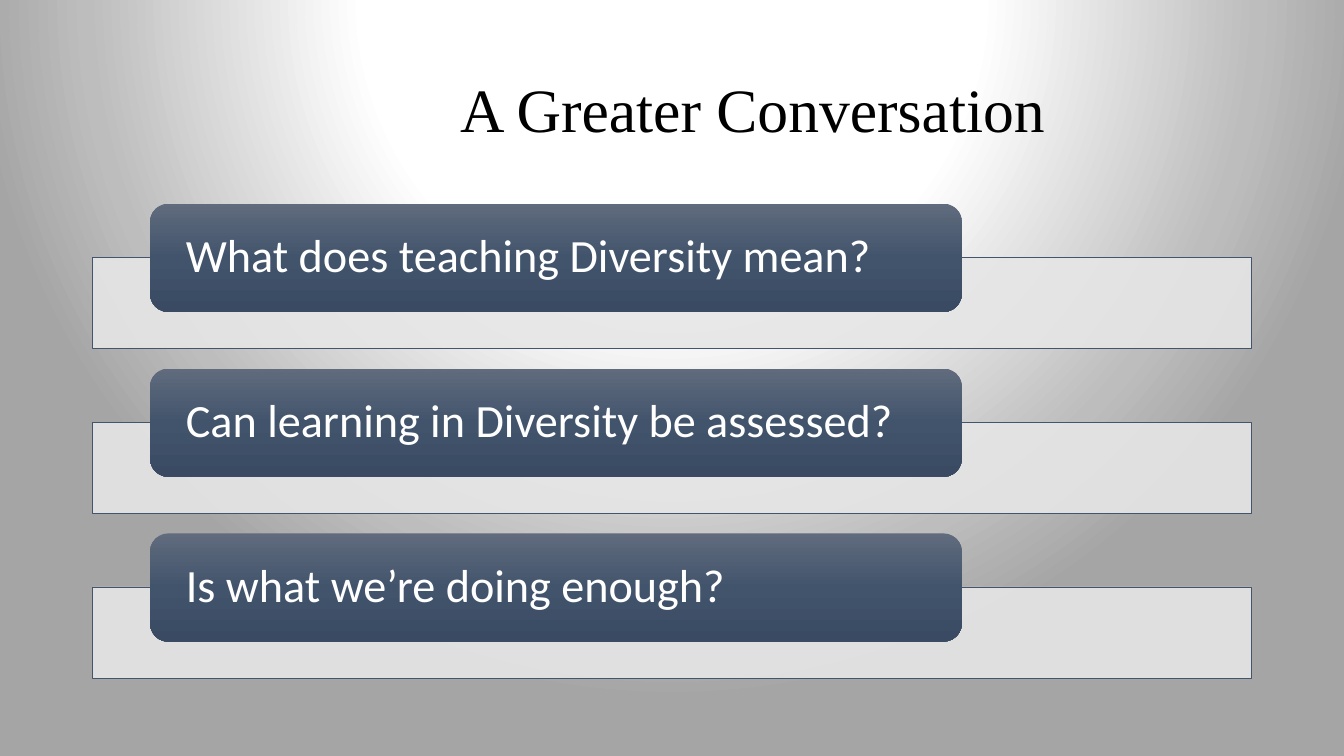
from dataclasses import dataclass

from lxml import etree
from pptx import Presentation
from pptx.dml.color import RGBColor
from pptx.enum.shapes import MSO_SHAPE
from pptx.enum.text import MSO_ANCHOR, PP_ALIGN
from pptx.oxml.ns import qn
from pptx.util import Emu, Pt

RECT, ROUNDED = MSO_SHAPE.RECTANGLE, MSO_SHAPE.ROUNDED_RECTANGLE
LEFT, CENTER = PP_ALIGN.LEFT, PP_ALIGN.CENTER
MIDDLE = MSO_ANCHOR.MIDDLE
PX = 9525  # EMU in one px, 96 px to the inch


@dataclass(frozen=True)
class Theme:
    title_font: str = "Times New Roman"
    body_font: str = "Calibri"
    title_size: int = 44
    question_size: int = 33
    title_color: str = "000000"
    question_color: str = "FFFFFF"
    bar_fill: str = "E7E6E6"
    bar_opacity: int = 90
    bar_line: str = "44546A"
    pill_stops: tuple = ((0, "606B7D"), (50, "42546C"), (100, "394A62"))
    backdrop_stops: tuple = ((0, "FFFFFF"), (40, "FFFFFF"),
                             (76, "BDBDBD"), (91, "A5A5A5"))


def px(*lengths):
    return [Emu(length * PX) for length in lengths]


def write_gradient(parent, stops, focus=None):
    """Fill a gradient with stops: downwards, or round a focus (l, t, r, b)."""
    gradient = parent.find(qn("a:gradFill"))
    for child in list(gradient):
        gradient.remove(child)
    stop_list = etree.SubElement(gradient, qn("a:gsLst"))
    for percent, color in stops:
        stop = etree.SubElement(stop_list, qn("a:gs"), pos=str(percent * 1000))
        etree.SubElement(stop, qn("a:srgbClr"), val=color)
    if focus:
        circle = etree.SubElement(gradient, qn("a:path"), path="circle")
        sides = {side: str(value * 1000) for side, value in zip("ltrb", focus)}
        etree.SubElement(circle, qn("a:fillToRect"), **sides)
    else:
        etree.SubElement(gradient, qn("a:lin"), ang="5400000", scaled="0")


def write_text(frame, text, *, font, size, color, align=LEFT, inset=(10, 5)):
    frame.word_wrap = True
    frame.vertical_anchor = MIDDLE
    side, edge = px(*inset)
    frame.margin_left = frame.margin_right = side
    frame.margin_top = frame.margin_bottom = edge
    paragraph = frame.paragraphs[0]
    paragraph.alignment = align
    paragraph.line_spacing = 0.9
    run = paragraph.add_run()
    run.text = text
    run.font.name = font
    run.font.size = Pt(size)
    run.font.color.rgb = RGBColor.from_string(color)


class SlideBuilder:
    def __init__(self, slide, theme):
        self.slide = slide
        self.theme = theme

    def backdrop(self):
        self.slide.background.fill.gradient()
        properties = self.slide.element.find(".//" + qn("p:bgPr"))
        write_gradient(properties, self.theme.backdrop_stops,
                       focus=(50, -80, 50, 180))

    def title(self, text, *box):
        heading = self.slide.shapes.add_textbox(*px(*box))
        write_text(heading.text_frame, text, font=self.theme.title_font,
                   size=self.theme.title_size, color=self.theme.title_color,
                   align=CENTER)

    def bar(self, *box):
        bar = self.slide.shapes.add_shape(RECT, *px(*box))
        bar.shadow.inherit = False
        bar.fill.solid()
        bar.fill.fore_color.rgb = RGBColor.from_string(self.theme.bar_fill)
        tint = bar.element.spPr.find(qn("a:solidFill"))[0]
        etree.SubElement(tint, qn("a:alpha"),
                         val=str(self.theme.bar_opacity * 1000))
        bar.line.color.rgb = RGBColor.from_string(self.theme.bar_line)
        bar.line.width = Pt(0.5)

    def pill(self, text, *box):
        pill = self.slide.shapes.add_shape(ROUNDED, *px(*box))
        pill.shadow.inherit = False
        pill.fill.gradient()
        write_gradient(pill.element.spPr, self.theme.pill_stops)
        pill.line.fill.background()
        write_text(pill.text_frame, text, font=self.theme.body_font,
                   size=self.theme.question_size,
                   color=self.theme.question_color, inset=(29, 0))


def main():
    deck = Presentation()
    deck.slide_width, deck.slide_height = px(1280, 720)
    builder = SlideBuilder(deck.slides.add_slide(deck.slide_layouts[6]), Theme())

    # Background and title
    builder.backdrop()
    builder.title("A Greater Conversation", 243, 38, 948, 139)

    # Questions, each on its own bar
    questions = ("What does teaching Diversity mean?",
                 "Can learning in Diversity be assessed?",
                 "Is what we’re doing enough?")
    first_top, row_step, bar_drop = 194, 157, 51
    for row, question in enumerate(questions):
        top = first_top + row * row_step
        builder.bar(88, top + bar_drop, 1104, 87)
        builder.pill(question, 143, top, 773, 103)

    deck.save("out.pptx")


if __name__ == "__main__":
    main()
